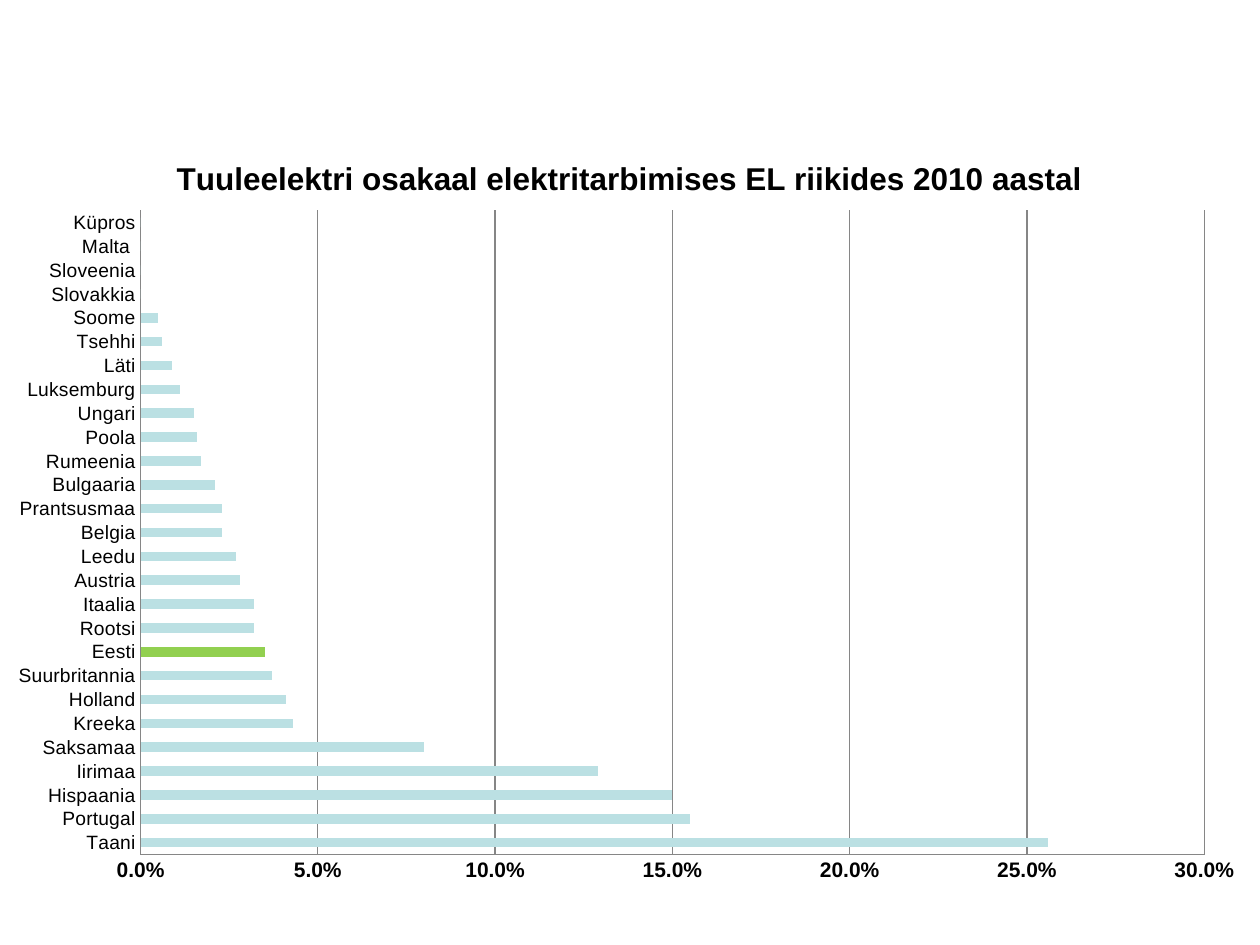
from lxml.etree import SubElement
from pptx import Presentation
from pptx.chart.data import CategoryChartData
from pptx.dml.color import RGBColor
from pptx.enum.chart import XL_CHART_TYPE, XL_TICK_MARK
from pptx.oxml import parse_xml
from pptx.oxml.ns import nsdecls, qn
from pptx.util import Pt

SHARES = [
    ("Taani", 0.256), ("Portugal", 0.155), ("Hispaania", 0.15),
    ("Iirimaa", 0.129), ("Saksamaa", 0.08), ("Kreeka", 0.043),
    ("Holland", 0.041), ("Suurbritannia", 0.037), ("Eesti", 0.035),
    ("Rootsi", 0.032), ("Itaalia", 0.032), ("Austria", 0.028),
    ("Leedu", 0.027), ("Belgia", 0.023), ("Prantsusmaa", 0.023),
    ("Bulgaaria", 0.021), ("Rumeenia", 0.017), ("Poola", 0.016),
    ("Ungari", 0.015), ("Luksemburg", 0.011), ("Läti", 0.009),
    ("Tsehhi", 0.006), ("Soome", 0.005), ("Slovakkia", 0),
    ("Sloveenia", 0), ("Malta ", 0), ("Küpros", 0),
]
TITLE = "Tuuleelektri osakaal elektritarbimises EL riikides 2010 aastal"
HIGHLIGHT = "Eesti"


def color(value):
    return RGBColor.from_string(value)


def set_font(font, size, bold=False):
    font.name = "Arial"
    font.size = Pt(size)
    font.bold = bold
    font.color.rgb = color("000000")


def paint(fmt, value):
    fmt.fill.solid()
    fmt.fill.fore_color.rgb = color(value)


def set_layout(element, **values):
    layout = element.find(qn("c:layout"))
    if layout is None:
        layout = parse_xml(f"<c:layout {nsdecls('c')}/>")
        element.insert(0, layout)
    manual = SubElement(layout, qn("c:manualLayout"))
    for name, value in values.items():
        SubElement(manual, qn(f"c:{name}")).set("val", str(value))


def format_axis(axis, size, bold=False):
    axis.major_tick_mark = XL_TICK_MARK.NONE
    axis.minor_tick_mark = XL_TICK_MARK.NONE
    set_font(axis.tick_labels.font, size, bold)
    axis.format.line.color.rgb = color("868686")
    axis.format.line.width = Pt(0.75)


def add_title(chart):
    chart.has_title = True
    tf = chart.chart_title.text_frame
    tf.text = TITLE
    set_font(tf.paragraphs[0].runs[0].font, 18, True)
    chart.chart_title.include_in_layout = False
    title = chart.element.find(".//" + qn("c:title"))
    set_layout(title, xMode="edge", yMode="edge", x=0.14, y=0.035)


def add_share_chart(s):
    data = CategoryChartData(number_format="0.0%")
    data.categories = [country for country, _ in SHARES]
    data.add_series("Series 1", [share for _, share in SHARES])
    chart = s.shapes.add_chart(XL_CHART_TYPE.BAR_CLUSTERED, Pt(-3.6), Pt(71.3),
                               Pt(723.6), Pt(441.4), data).chart
    chart.has_legend = False
    set_font(chart.font, 10)
    add_title(chart)

    format_axis(chart.category_axis, 11)
    axis = chart.value_axis
    format_axis(axis, 12, True)
    axis.minimum_scale, axis.maximum_scale, axis.major_unit = 0, 0.3, 0.05
    axis.tick_labels.number_format = "0.0%"
    axis.tick_labels.number_format_is_linked = False
    axis.has_major_gridlines = True
    axis.major_gridlines.format.line.color.rgb = color("868686")
    axis.major_gridlines.format.line.width = Pt(0.75)

    plot = chart.plots[0]
    plot.gap_width = 150
    plot.vary_by_categories = False
    series = plot.series[0]
    paint(series.format, "BBE0E3")
    index = [country for country, _ in SHARES].index(HIGHLIGHT)
    paint(series.points[index].format, "92D050")
    set_layout(chart.element.find(".//" + qn("c:plotArea")),
               layoutTarget="inner", xMode="edge", yMode="edge",
               x=0.116, y=0.111, w=0.84, h=0.834)


def main():
    prs = Presentation()
    prs.slide_width, prs.slide_height = Pt(720), Pt(540)
    s = prs.slides.add_slide(prs.slide_layouts[6])
    add_share_chart(s)
    prs.save("out.pptx")


if __name__ == "__main__":
    main()
